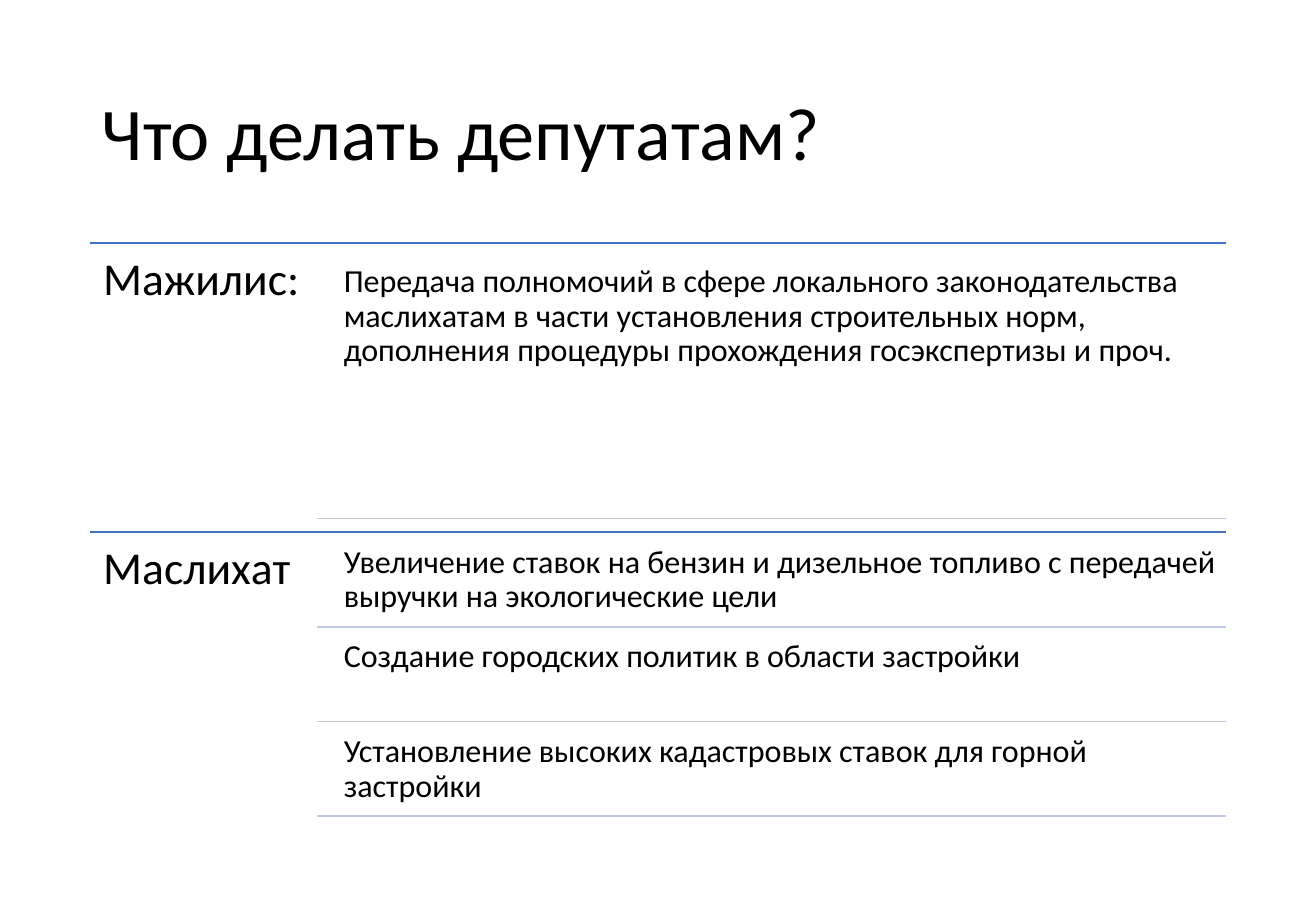
from lxml import etree
from pptx import Presentation
from pptx.dml.color import RGBColor
from pptx.enum.shapes import MSO_CONNECTOR
from pptx.enum.text import MSO_ANCHOR
from pptx.oxml.ns import qn
from pptx.util import Inches, Pt

BLACK = RGBColor(0x00, 0x00, 0x00)
BLUE = RGBColor(0x44, 0x72, 0xC4)
PALE_BLUE = RGBColor(0xC1, 0xC9, 0xE4)

LEFT, RIGHT = 0.74, 10.09
RULE_LEFT, ITEM_LEFT = 2.61, 2.75
TOP, SECTION_HEIGHT = 2, 2.38

SECTIONS = [
    ("Мажилис:", 2.27, 0.1, [
        "Передача полномочий в сфере локального законодательства маслихатам "
        "в части установления строительных норм, дополнения процедуры "
        "прохождения госэкспертизы и проч.",
    ]),
    ("Маслихат", 0.78, 0.03, [
        "Увеличение ставок на бензин и дизельное топливо с передачей выручки "
        "на экологические цели",
        "Создание городских политик в области застройки",
        "Установление высоких кадастровых ставок для горной застройки",
    ]),
]


class SlideBuilder:
    font = "Calibri"
    color = BLACK
    line_spacing = 0.9

    def __init__(self, slide):
        self.s = slide

    def text(self, text, x, y, w, h, size, inset, anchor=MSO_ANCHOR.TOP):
        tf = self.s.shapes.add_textbox(
            Inches(x), Inches(y), Inches(w), Inches(h)).text_frame
        tf.word_wrap = True
        tf.vertical_anchor = anchor
        tf.margin_left = tf.margin_right = Inches(inset[0])
        tf.margin_top = tf.margin_bottom = Inches(inset[1])
        p = tf.paragraphs[0]
        p.text = text
        p.line_spacing = self.line_spacing
        p.font.name = self.font
        p.font.size = Pt(size)
        p.font.color.rgb = self.color

    def rule(self, x, y, color):
        line = self.s.shapes.add_connector(
            MSO_CONNECTOR.STRAIGHT, Inches(x), Inches(y), Inches(RIGHT), Inches(y))
        line.line.color.rgb = color
        line.line.width = Pt(1)
        etree.SubElement(line._element.spPr, qn("a:effectLst"))


def main():
    prs = Presentation()
    prs.slide_width, prs.slide_height = Inches(10.83), Inches(7.5)
    b = SlideBuilder(prs.slides.add_slide(prs.slide_layouts[6]))

    b.text("Что делать депутатам?", LEFT, 0.4, 9.34, 1.45, 44, (0.1, 0.05),
           MSO_ANCHOR.MIDDLE)
    for i, (heading, pitch, gap, items) in enumerate(SECTIONS):
        top = TOP + i * SECTION_HEIGHT
        b.rule(LEFT, top, BLUE)
        b.text(heading, LEFT, top, RULE_LEFT - LEFT, SECTION_HEIGHT, 27, (0.11, 0.11))
        for j, item in enumerate(items):
            y = top + j * pitch
            b.text(item, ITEM_LEFT, y + gap, RIGHT - ITEM_LEFT, pitch - gap, 19,
                   (0.08, 0.08))
            b.rule(RULE_LEFT, y + pitch, PALE_BLUE)

    prs.save("out.pptx")


if __name__ == "__main__":
    main()
